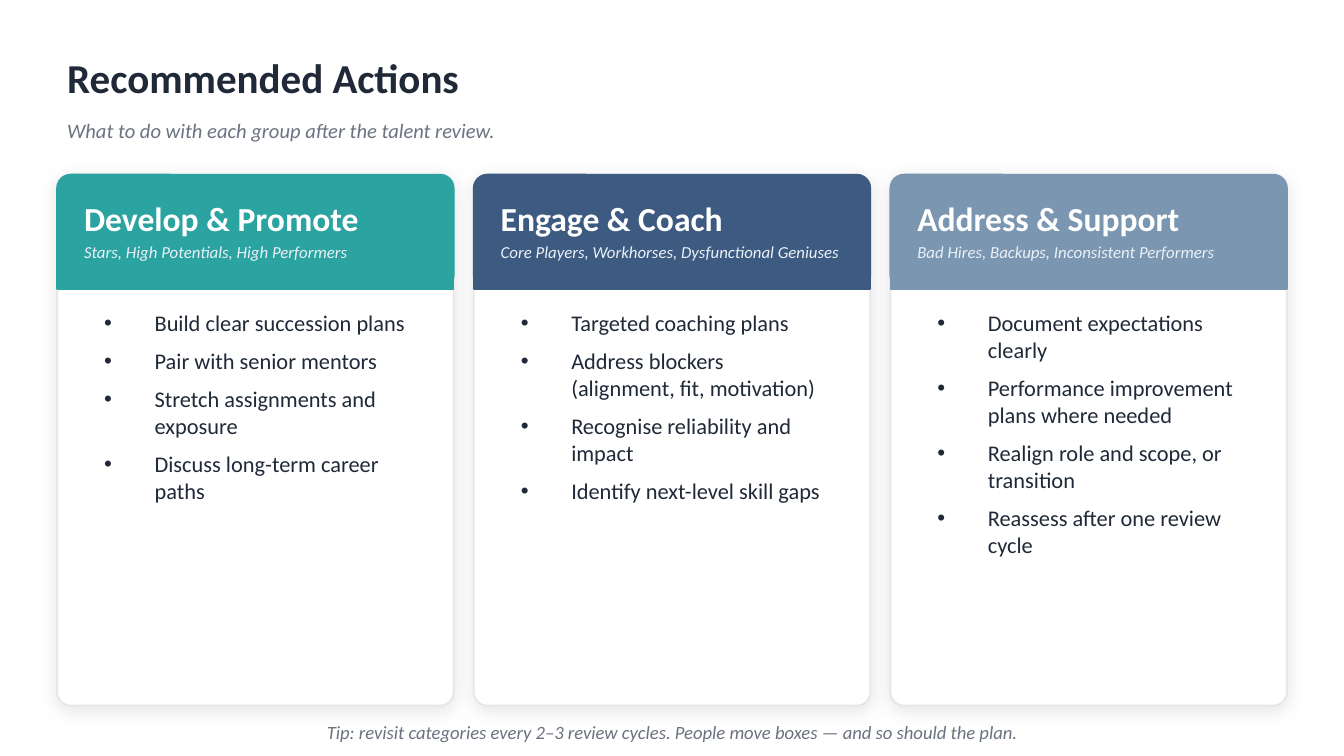
from lxml import etree
from pptx import Presentation
from pptx import util as u
from pptx.dml.color import RGBColor
from pptx.enum import shapes, text
from pptx.oxml.ns import qn

INK = RGBColor(0x1F, 0x29, 0x37)
GRAY = RGBColor(0x6B, 0x72, 0x80)
EDGE = RGBColor(0xE5, 0xE7, 0xEB)
PALE = RGBColor(0xEA, 0xF1, 0xF8)
WHITE = RGBColor(0xFF, 0xFF, 0xFF)
TEAL = RGBColor(0x2B, 0xA3, 0xA0)
NAVY = RGBColor(0x3D, 0x5A, 0x80)
STEEL = RGBColor(0x7B, 0x96, 0xB0)

ROUND = shapes.MSO_SHAPE.ROUNDED_RECTANGLE
RECT = shapes.MSO_SHAPE.RECTANGLE
TOP, MID = text.MSO_ANCHOR.TOP, text.MSO_ANCHOR.MIDDLE
LEFT, CENTER = text.PP_ALIGN.LEFT, text.PP_ALIGN.CENTER

COLS, ROWS = 100, 56.25  # square grid over the slide
WIDE, TALL = 29.5, 39.5  # card size
STEP = 31                # from one card to the next
HEAD = 13                # top row of the cards

GROUPS = [
    ("Develop & Promote", "Stars, High Potentials, High Performers", TEAL,
     ["Build clear succession plans", "Pair with senior mentors",
      "Stretch assignments and exposure", "Discuss long-term career paths"]),
    ("Engage & Coach", "Core Players, Workhorses, Dysfunctional Geniuses", NAVY,
     ["Targeted coaching plans", "Address blockers (alignment, fit, motivation)",
      "Recognise reliability and impact", "Identify next-level skill gaps"]),
    ("Address & Support", "Bad Hires, Backups, Inconsistent Performers", STEEL,
     ["Document expectations clearly", "Performance improvement plans where needed",
      "Realign role and scope, or transition", "Reassess after one review cycle"]),
]


class Deck:
    """Holds the style and the current slide."""
    face = "Calibri"

    def __init__(self):
        self.prs = Presentation()
        self.prs.slide_width = u.Inches(10)
        self.prs.slide_height = u.Inches(5.625)
        self.cell = self.prs.slide_width / COLS
        # The comparison layout has a title and four bodies
        self.slide = self.prs.slides.add_slide(self.prs.slide_layouts[4])
        self.slots = {s.placeholder_format.idx: s for s in self.slide.placeholders}

    def box(self, *cells):
        return [u.Emu(round(c * self.cell)) for c in cells]

    def take(self, idx, *cells):
        """Move a placeholder into place, in front of what is drawn so far."""
        slot = self.slots.pop(idx)
        slot.left, slot.top, slot.width, slot.height = self.box(*cells)
        self.slide.shapes._spTree.append(slot._element)
        return slot

    def frame(self, shape, anchor, side=0, edge=0):
        tf = shape.text_frame
        tf.word_wrap = True
        tf.auto_size = text.MSO_AUTO_SIZE.NONE
        tf.vertical_anchor = anchor
        tf.margin_left = tf.margin_right = u.Inches(side)
        tf.margin_top = tf.margin_bottom = u.Inches(edge)
        return tf

    def run(self, par, words, size, color, bold=False, italic=False):
        run = par.add_run()
        run.text = words
        font = run.font
        font.name, font.size = self.face, u.Pt(size)
        font.bold, font.italic = bold, italic
        font.color.rgb = color

    def title(self, words, *cells):
        par = self.frame(self.take(0, *cells), MID).paragraphs[0]
        par.alignment = LEFT
        self.run(par, words, 22, INK, bold=True)

    def label(self, words, size, color, *cells, anchor=MID, align=LEFT, **look):
        shape = self.slide.shapes.add_textbox(*self.box(*cells))
        par = self.frame(shape, anchor).paragraphs[0]
        par.alignment = align
        self.run(par, words, size, color, **look)

    def panel(self, kind, fill, line, *cells, curve=None):
        shape = self.slide.shapes.add_shape(kind, *self.box(*cells))
        shape.shadow.inherit = False
        shape.fill.solid()
        shape.fill.fore_color.rgb = fill
        shape.line.color.rgb = line
        shape.line.width = u.Pt(1)
        if curve:
            shape.adjustments[0] = curve
        return shape

    def shade(self, shape):
        """Soft drop shadow straight below."""
        fx = shape._element.spPr.find(qn("a:effectLst"))
        glow = etree.SubElement(fx, qn("a:outerShdw"), blurRad=str(u.Pt(10)),
                                dist=str(u.Pt(2)), dir="5400000",
                                algn="ctr", rotWithShape="0")
        tint = etree.SubElement(glow, qn("a:srgbClr"), val="000000")
        etree.SubElement(tint, qn("a:alpha"), val="10000")

    def bullets(self, idx, items, *cells):
        tf = self.frame(self.take(idx, *cells), TOP, 0.1, 0.05)
        for i, item in enumerate(items):
            par = tf.add_paragraph() if i else tf.paragraphs[0]
            props = par._p.get_or_add_pPr()
            props.set("marL", str(u.Inches(0.375)))
            props.set("indent", str(-u.Inches(0.375)))
            etree.SubElement(props, qn("a:buChar"), char="•")
            par.space_before, par.space_after = u.Pt(0), u.Pt(6)
            self.run(par, item, 12, INK)

    def card(self, idx, left, name, who, color, items):
        self.shade(self.panel(ROUND, WHITE, EDGE, left, HEAD, WIDE, TALL, curve=0.034))
        # Header band: round at the top, square at the bottom
        self.panel(ROUND, color, color, left, HEAD, WIDE, 8.5, curve=0.118)
        self.panel(RECT, color, color, left, HEAD + 4.5, WIDE, 4)
        self.label(name, 18, WHITE, left + 2, HEAD + 1, WIDE - 4, 4.5, bold=True)
        self.label(who, 9, PALE, left + 2, HEAD + 5, WIDE - 4, 3.2,
                   anchor=TOP, italic=True)
        self.bullets(idx, items, left + 2.5, HEAD + 9.5, WIDE - 5, 28.5)

    def save(self):
        for slot in self.slots.values():
            slot._element.getparent().remove(slot._element)
        self.prs.save("out.pptx")


def main():
    deck = Deck()

    # Heading
    deck.title("Recommended Actions", 5, 3, 90, 5.5)
    deck.label("What to do with each group after the talent review.",
               11, GRAY, 5, 8.2, 90, 3, italic=True)

    # One card per group, centred as a row
    start = (COLS - WIDE - STEP * (len(GROUPS) - 1)) / 2
    for i, group in enumerate(GROUPS):
        deck.card(i + 1, start + i * STEP, *group)

    # Tip
    deck.label("Tip: revisit categories every 2–3 review cycles. "
               "People move boxes — and so should the plan.",
               10, GRAY, 5, 53, 90, 3, align=CENTER, italic=True)
    deck.save()


if __name__ == "__main__":
    main()
